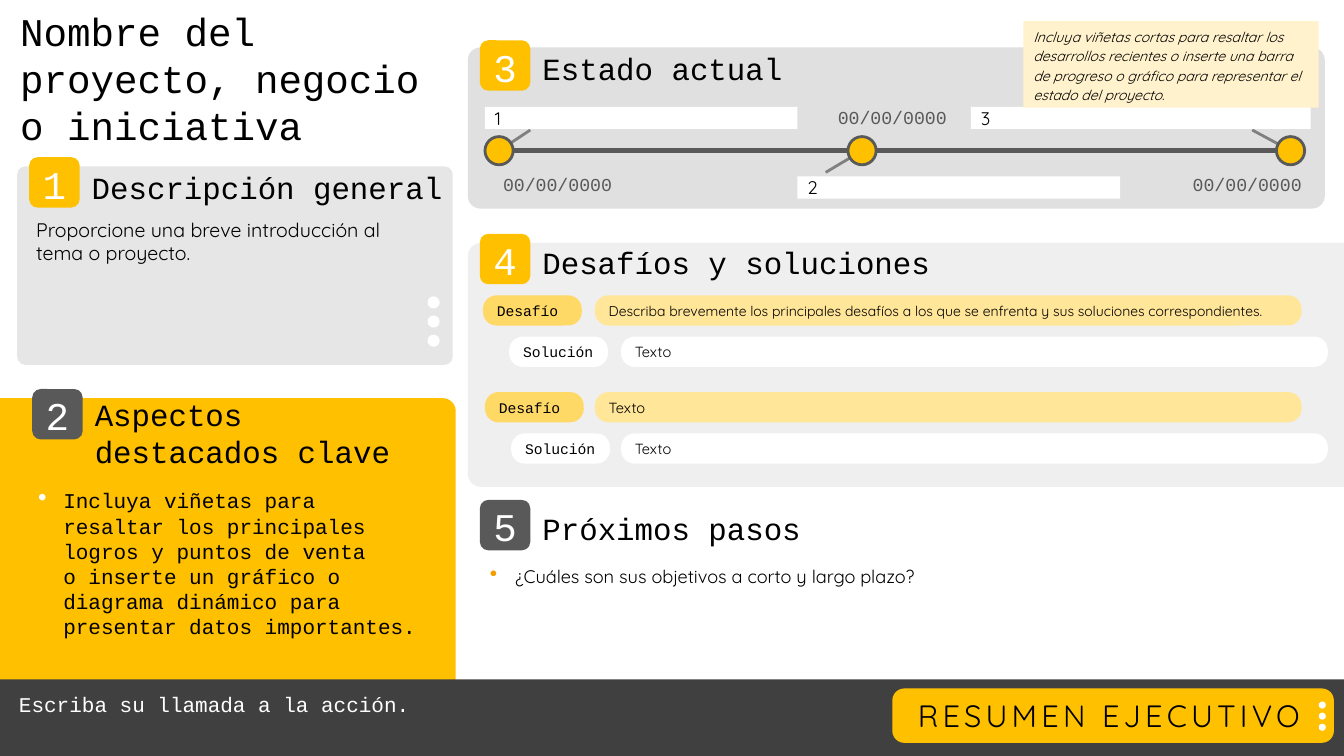
from collections import namedtuple

from lxml import etree
from pptx import Presentation
from pptx.dml.color import RGBColor
from pptx.enum.shapes import MSO_CONNECTOR, MSO_SHAPE
from pptx.enum.text import MSO_ANCHOR, PP_ALIGN
from pptx.oxml.ns import qn
from pptx.util import Inches, Pt

RECT, ROUND, OVAL = MSO_SHAPE.RECTANGLE, MSO_SHAPE.ROUNDED_RECTANGLE, MSO_SHAPE.OVAL
ROUND_ONE, ROUND_TWO = MSO_SHAPE.ROUND_1_RECTANGLE, MSO_SHAPE.ROUND_2_SAME_RECTANGLE
STRAIGHT = MSO_CONNECTOR.STRAIGHT
TOP, MIDDLE = MSO_ANCHOR.TOP, MSO_ANCHOR.MIDDLE
LEFT, CENTER = PP_ALIGN.LEFT, PP_ALIGN.CENTER

MONO, SANS = "Courier New", "Quicksand"
BLACK, WHITE, GOLD, GRAY = "000000", "FFFFFF", "FFC000", "595959"

# The slide is a grid of 133.3 columns by 75 rows
CELL = 0.1
COLS, ROWS = 133.3, 75
FOOTER_ROWS = 7.6
BADGE = 5

Box = namedtuple("Box", "x y w h")


def grid(cells):
    return Inches(cells * CELL)


def color(hex_code):
    return RGBColor.from_string(hex_code)


def write(shape, text, size, font=SANS, ink=BLACK, align=LEFT, anchor=TOP,
          insets=(1, 0.5, 1, 0.5), spacing=None, italic=False):
    frame = shape.text_frame
    frame.word_wrap = True
    frame.vertical_anchor = anchor
    (frame.margin_left, frame.margin_top,
     frame.margin_right, frame.margin_bottom) = map(grid, insets)
    paragraph = frame.paragraphs[0]
    paragraph.text = text
    paragraph.alignment = align
    for run in paragraph.runs:
        run.font.size, run.font.name, run.font.italic = Pt(size), font, italic
        run.font.color.rgb = color(ink)
        if spacing:
            run.font._element.set("spc", str(spacing * 100))
    return paragraph


def add_bullet(paragraph, bullet_color):
    paragraph.space_after = Pt(6)
    properties = paragraph._p.get_or_add_pPr()
    properties.set("marL", str(Inches(0.25)))
    properties.set("indent", str(-Inches(0.25)))
    tint = etree.SubElement(properties, qn("a:buClr"))
    etree.SubElement(tint, qn("a:srgbClr")).set("val", bullet_color)
    etree.SubElement(properties, qn("a:buSzPct")).set("val", "120000")
    etree.SubElement(properties, qn("a:buChar")).set("char", "•")


def add_block(slide, kind, box, fill, corners=(), outline=None):
    block = slide.shapes.add_shape(kind, *map(grid, box))
    block.shadow.inherit = False
    block.fill.solid()
    block.fill.fore_color.rgb = color(fill)
    for index, corner in enumerate(corners):
        block.adjustments[index] = corner
    if outline:
        block.line.color.rgb = color(outline)
        block.line.width = Pt(2)
    else:
        block.line.fill.background()
    return block


def add_text(slide, box, text, size, **style):
    return write(slide.shapes.add_textbox(*map(grid, box)), text, size, **style)


def add_line(slide, start, end, ink, width):
    line = slide.shapes.add_connector(STRAIGHT, *map(grid, start + end))
    line.line.color.rgb = color(ink)
    line.line.width = Pt(width)
    etree.SubElement(line._element.spPr, qn("a:effectLst"))


def add_dots(slide, x, y, size, step):
    for index in range(3):
        add_block(slide, OVAL, (x, y + index * step, size, size), WHITE)


def add_heading(slide, x, y, number, title, width, fill=GOLD, drop=1):
    badge = add_block(slide, ROUND, (x, y, BADGE, BADGE), fill)
    write(badge, str(number), 28, font=MONO, ink=WHITE, align=CENTER, anchor=MIDDLE,
          insets=(0, 0.2, 0, 0), spacing=-3)
    add_text(slide, (x + 6.2, y + drop, width, 3.6), title, 22, font=MONO,
             anchor=MIDDLE, insets=(0, 0, 0, 0))


def add_overview(slide, box):
    add_block(slide, ROUND, box, "E7E6E6", [0.042])
    add_heading(slide, box.x + 1.2, box.y - 0.9, 1, "Descripción general", 36.1, drop=1.2)
    add_text(slide, (box.x + 0.9, box.y + 4.6, 38.9, 5.7),
             "Proporcione una breve introducción al tema o proyecto.", 14)
    add_dots(slide, box.x + box.w - 2.5, box.y + 12.9, 1.2, 1.9)


def add_highlights(slide, box):
    add_block(slide, ROUND_ONE, box, GOLD, [0.036])
    add_heading(slide, box.x + 3.2, box.y - 0.9, 2, "Aspectos destacados clave",
                32.1, fill=GRAY, drop=2.5)
    points = add_text(slide, (box.x + 2.8, box.y + 8.4, 39.6, 16.2),
                      "Incluya viñetas para resaltar los principales logros y puntos de venta "
                      "\vo inserte un gráfico o diagrama dinámico para presentar datos "
                      "importantes.", 15, font=MONO)
    add_bullet(points, WHITE)


def add_status(slide, box):
    add_block(slide, ROUND, box, "E0E0E0", [0.079])
    add_heading(slide, box.x + 1.2, box.y - 0.7, 3, "Estado actual", 41.1)

    # Milestones: centre, leader offset, label left, width and row, date left and row
    axis = box.y + 10.25
    above, below = box.y + 5.9, box.y + 12.8
    milestones = [
        (3.1, (3.1, -2.05), 1.7, 31, above, 1.2, box.y + 12),
        (39.1, (-3.6, 2.15), 32.7, 32, below, 34.4, box.y + 5.4),
        (81.6, (-3.8, -2.05), 49.9, 33.7, above, 69.6, box.y + 12),
    ]
    for center, (dx, dy), *_ in milestones:
        add_line(slide, (box.x + center, axis), (box.x + center + dx, axis + dy), "808080", 2)
    add_line(slide, (box.x + milestones[0][0], axis),
             (box.x + milestones[-1][0], axis), GRAY, 4)
    for number, (center, _, left, width, row, date_left, date_row) in enumerate(milestones, 1):
        add_block(slide, OVAL, (box.x + center - 1.4, axis - 1.4, 2.8, 2.8), GOLD, outline=GRAY)
        label = add_block(slide, RECT, (box.x + left, row, width, 2.2), WHITE)
        write(label, str(number), 13, anchor=MIDDLE, insets=(1, 0, 1, 0))
        add_text(slide, (box.x + date_left, date_row, 15.4, 3.2), "00/00/0000", 13,
                 font=MONO, ink=GRAY, align=CENTER)

    hint = add_block(slide, RECT, (box.x + 55.1, box.y - 2.6, 29.3, 8.6), "FFF2CC")
    advice = write(hint, "Incluya viñetas cortas para resaltar los desarrollos recientes o "
                   "inserte una barra de progreso o gráfico para representar el estado del "
                   "proyecto.", 10, italic=True)
    advice.line_spacing = 1.15


def add_challenges(slide, box):
    # The panel stands upright and is turned so its round corners face left
    panel = add_block(slide, ROUND_TWO,
                      (box.x + (box.w - box.h) / 2, box.y - (box.w - box.h) / 2, box.h, box.w),
                      "EFEFEF", [0.054, 0])
    panel.rotation = 270
    add_heading(slide, box.x + 1.2, box.y - 0.9, 4, "Desafíos y soluciones", 57.3)

    challenges = [
        ("Describa brevemente los principales desafíos a los que se enfrenta y sus "
         "soluciones correspondientes.", 10, 0),
        ("Texto", 10.5, 0.2),
    ]
    for pair, (challenge, size, shift) in enumerate(challenges):
        rows = [("Desafío", challenge, size, "FFD966", "FFE699"),
                ("Solución", "Texto", 10.5, WHITE, WHITE)]
        for step, (tag, detail, detail_size, tag_fill, detail_fill) in enumerate(rows):
            x, y = box.x + 1.5 + step * 2.6, box.y + 5.2 + pair * 9.6 + step * 4.1
            pills = [(x + shift, 9.8, tag, 10.5, MONO, tag_fill),
                     (x + 11.1, 70.1, detail, detail_size, SANS, detail_fill)]
            for left, width, text, text_size, font, fill in pills:
                pill = add_block(slide, ROUND, (left, y, width, 3), fill, [0.448])
                write(pill, text, text_size, font=font, anchor=MIDDLE, insets=(1, 0, 0, 0))


def add_next_steps(slide, box):
    add_heading(slide, box.x, box.y, 5, "Próximos pasos", 32.1, fill=GRAY)
    goals = add_text(slide, (box.x, box.y + 6, box.w, 3.2),
                     "¿Cuáles son sus objetivos a corto y largo plazo?", 13)
    add_bullet(goals, "F59C00")


def add_footer(slide, box):
    add_block(slide, RECT, box, "404040")
    add_text(slide, (box.x + 0.9, box.y + 0.7, 83.6, 3.5),
             "Escriba su llamada a la acción.", 15, font=MONO, ink=WHITE)
    summary = add_block(slide, ROUND, (box.x + 88.5, box.y + 0.9, 43.8, 5.4), GOLD, [0.221])
    write(summary, "RESUMEN EJECUTIVO", 22, align=CENTER, anchor=MIDDLE,
          insets=(1, 0.5, 1.8, 0.5), spacing=3)
    add_dots(slide, box.x + 130.8, box.y + 2.2, 0.7, 1.1)


def main():
    deck = Presentation()
    deck.slide_width, deck.slide_height = grid(COLS), grid(ROWS)
    slide = deck.slides.add_slide(deck.slide_layouts[6])

    # Left column
    add_text(slide, (2, 0.7, 41.9, 12.6), "Nombre del proyecto, negocio o iniciativa", 28,
             font=MONO, insets=(0, 0, 0, 0))
    add_overview(slide, Box(1.7, 16.5, 43.2, 19.7))
    add_highlights(slide, Box(0, 39.5, 45.2, ROWS - 39.5))

    # Right column
    add_status(slide, Box(46.4, 4.7, 85, 16))
    add_challenges(slide, Box(46.4, 24.1, COLS - 46.4, 24.2))
    add_next_steps(slide, Box(47.6, 49.6, 84.5, 17))

    add_footer(slide, Box(0, ROWS - FOOTER_ROWS, COLS, FOOTER_ROWS))
    deck.save("out.pptx")


if __name__ == "__main__":
    main()
